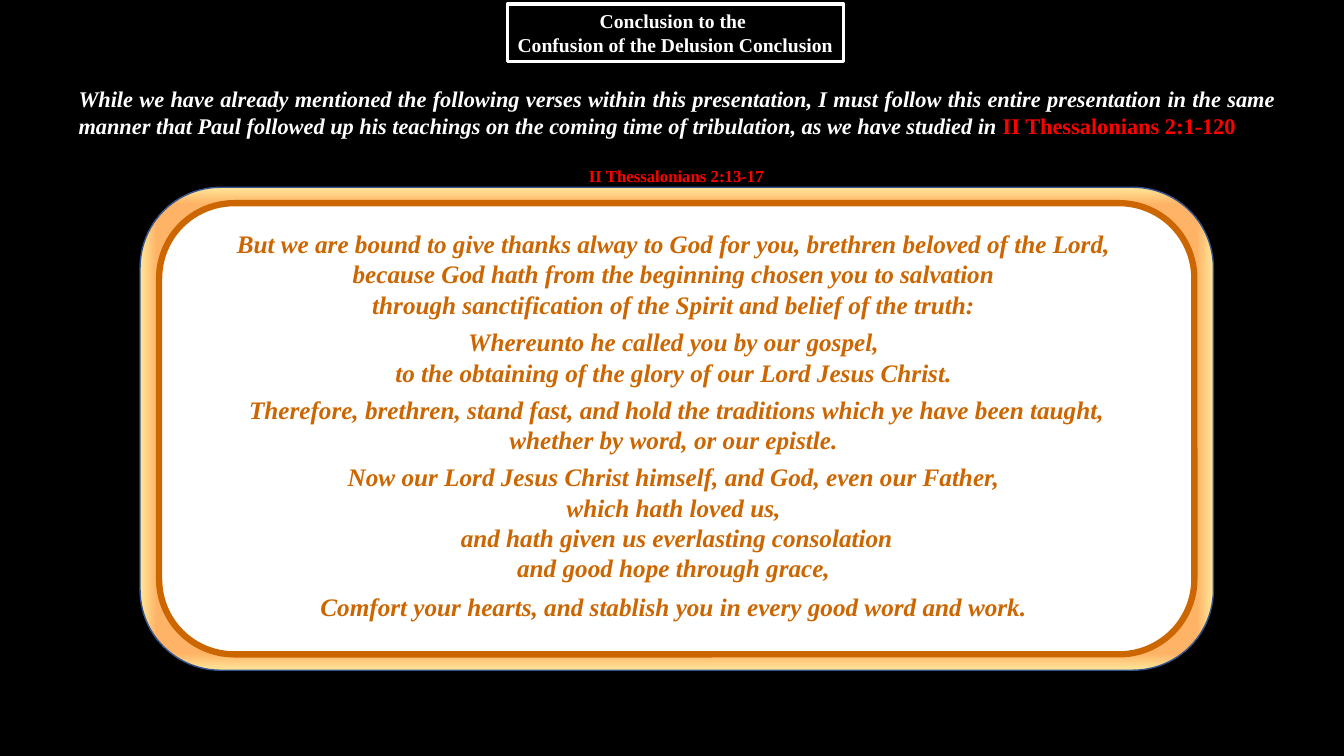
from dataclasses import dataclass

from lxml import etree
from pptx import Presentation
from pptx.dml.color import RGBColor
from pptx.enum.shapes import MSO_SHAPE
from pptx.enum.text import MSO_ANCHOR, MSO_AUTO_SIZE, PP_ALIGN
from pptx.oxml import parse_xml
from pptx.util import Cm, Pt

ROUNDED = MSO_SHAPE.ROUNDED_RECTANGLE
CENTER, JUSTIFY = PP_ALIGN.CENTER, PP_ALIGN.JUSTIFY
MIDDLE = MSO_ANCHOR.MIDDLE
FIT_SHAPE, NO_FIT = MSO_AUTO_SIZE.SHAPE_TO_FIT_TEXT, MSO_AUTO_SIZE.NONE
DRAWING_NS = "http://schemas.openxmlformats.org/drawingml/2006/main"
TITLE_ONLY = 5


@dataclass(frozen=True)
class Theme:
    """Colours, font and type sizes of the slide."""
    font: str = "Times New Roman"
    black: str = "000000"
    white: str = "FFFFFF"
    red: str = "FF0000"
    brown: str = "CC6600"
    blue: str = "325491"
    gold: str = "FFE699"
    orange: str = "FFB366"
    title_size: int = 14
    intro_size: int = 16
    verse_size: int = 18
    reference_size: int = 12


@dataclass(frozen=True)
class Box:
    """A rectangle in centimetres."""
    left: float
    top: float
    width: float
    height: float

    def lengths(self):
        """Return the four lengths as python-pptx expects them."""
        return Cm(self.left), Cm(self.top), Cm(self.width), Cm(self.height)

    def inset(self, across, down):
        """Return the box shrunk on every side."""
        return Box(self.left + across, self.top + down,
                   self.width - 2 * across, self.height - 2 * down)


THEME = Theme()
TITLE = "Conclusion to the \nConfusion of the Delusion Conclusion"
INTRO = (
    "While we have already mentioned the following verses within this "
    "presentation, I must follow this entire presentation in the same manner "
    "that Paul followed up his teachings on the coming time of tribulation, "
    "as we have studied in "
)
INTRO_REFERENCE = "II Thessalonians 2:1-120"
REFERENCE = "II Thessalonians 2:13-17"
VERSES = [
    (23.29, "But we are bound to give thanks alway to God for you, "
            "brethren beloved of the Lord, \n"
            "because God hath from the beginning chosen you to salvation \n"
            "through sanctification of the Spirit and belief of the truth: "),
    (19.66, "Whereunto he called you by our gospel, \n"
            "to the obtaining of the glory of our Lord Jesus Christ. "),
    (22.35, "Therefore, brethren, stand fast, and hold the traditions which "
            "ye have been taught,\n"
            "whether by word, or our epistle. "),
    (21.46, "Now our Lord Jesus Christ himself, and God, even our Father, \n"
            "which hath loved us, \n"
            "and hath given us everlasting consolation\n"
            "and good hope through grace, "),
    (18.62, "Comfort your hearts, and stablish you in every good word "
            "and work. "),
]


def style_span(span, size, color, italic):
    """Format one run in the bold slide font."""
    span.font.name = THEME.font
    span.font.size = Pt(size)
    span.font.bold = True
    span.font.italic = italic
    span.font.color.rgb = RGBColor.from_string(color)


def style_frame(frame, size, color, italic=False, align=CENTER):
    """Format every paragraph of a text frame alike."""
    for para in frame.paragraphs:
        para.alignment = align
        for span in para.runs:
            style_span(span, size, color, italic)


def set_line(shape, color, weight):
    """Give a shape its outline."""
    shape.line.color.rgb = RGBColor.from_string(color)
    shape.line.width = Pt(weight)


def add_text(page, box, text, size, color, italic=False, align=CENTER):
    """Add a wrapping text box and return its frame."""
    frame = page.shapes.add_textbox(*box.lengths()).text_frame
    frame.word_wrap = True
    frame.auto_size = FIT_SHAPE
    frame.text = text
    style_frame(frame, size, color, italic, align)
    return frame


def add_rounded(page, box, color, line_color, weight):
    """Add a filled rounded rectangle without shadow."""
    shape = page.shapes.add_shape(ROUNDED, *box.lengths())
    shape.shadow.inherit = False
    shape.fill.solid()
    shape.fill.fore_color.rgb = RGBColor.from_string(color)
    set_line(shape, line_color, weight)
    return shape


def set_glow(shape, inner, outer):
    """Replace a solid fill by a gradient that brightens at the edge."""
    solid = shape.element.spPr.find(f"{{{DRAWING_NS}}}solidFill")
    glow = parse_xml(
        f'<a:gradFill xmlns:a="{DRAWING_NS}" rotWithShape="1"><a:gsLst/>'
        '<a:path path="rect"><a:fillToRect l="50000" t="50000" '
        'r="50000" b="50000"/></a:path></a:gradFill>')
    for position, color in ((0, inner), (93000, inner), (100000, outer)):
        stop = etree.SubElement(glow[0], f"{{{DRAWING_NS}}}gs", pos=str(position))
        etree.SubElement(stop, f"{{{DRAWING_NS}}}srgbClr", val=color)
    solid.getparent().replace(solid, glow)


def add_title(page, box):
    """Place the framed slide title."""
    title = page.shapes.title
    title.left, title.top, title.width, title.height = box.lengths()
    set_line(title, THEME.white, 2.25)
    frame = title.text_frame
    frame.text = TITLE
    frame.word_wrap = False
    frame.auto_size = NO_FIT
    frame.vertical_anchor = MIDDLE
    style_frame(frame, THEME.title_size, THEME.white)


def add_intro(page, box):
    """Place the introduction with its red reference."""
    frame = add_text(page, box, INTRO, THEME.intro_size, THEME.white, True, JUSTIFY)
    span = frame.paragraphs[0].add_run()
    span.text = INTRO_REFERENCE
    style_span(span, THEME.intro_size, THEME.red, False)


def add_panel(page, box):
    """Draw the glowing panel with its verses and reference."""
    rim = add_rounded(page, box, THEME.gold, THEME.blue, 1)
    set_glow(rim, THEME.orange, THEME.gold)
    add_rounded(page, box.inset(0.48, 0.4), THEME.white, THEME.brown, 4.5)
    middle = box.left + box.width / 2
    top = box.top + 0.91
    for width, verse in VERSES:
        lines = len(verse.split("\n"))
        verse_box = Box(middle - width / 2, top, width, 0.77 * lines + 0.26)
        add_text(page, verse_box, verse, THEME.verse_size, THEME.brown, True)
        top += 0.78 * lines + 0.14
    reference_box = Box(middle - 3.09, box.top - 0.66, 6.17, 0.76)
    add_text(page, reference_box, REFERENCE, THEME.reference_size, THEME.red)


def main():
    """Build and save the deck."""
    deck = Presentation()
    deck.slide_width, deck.slide_height = Cm(33.87), Cm(19.05)
    page = deck.slides.add_slide(deck.slide_layouts[TITLE_ONLY])
    page.background.fill.solid()
    page.background.fill.fore_color.rgb = RGBColor.from_string(THEME.black)
    add_title(page, Box(12.78, 0.1, 8.48, 1.45))
    add_intro(page, Box(1.73, 2.03, 30.68, 1.63))
    add_panel(page, Box(3.53, 4.72, 27.05, 12.17))
    deck.save("out.pptx")


if __name__ == "__main__":
    main()
